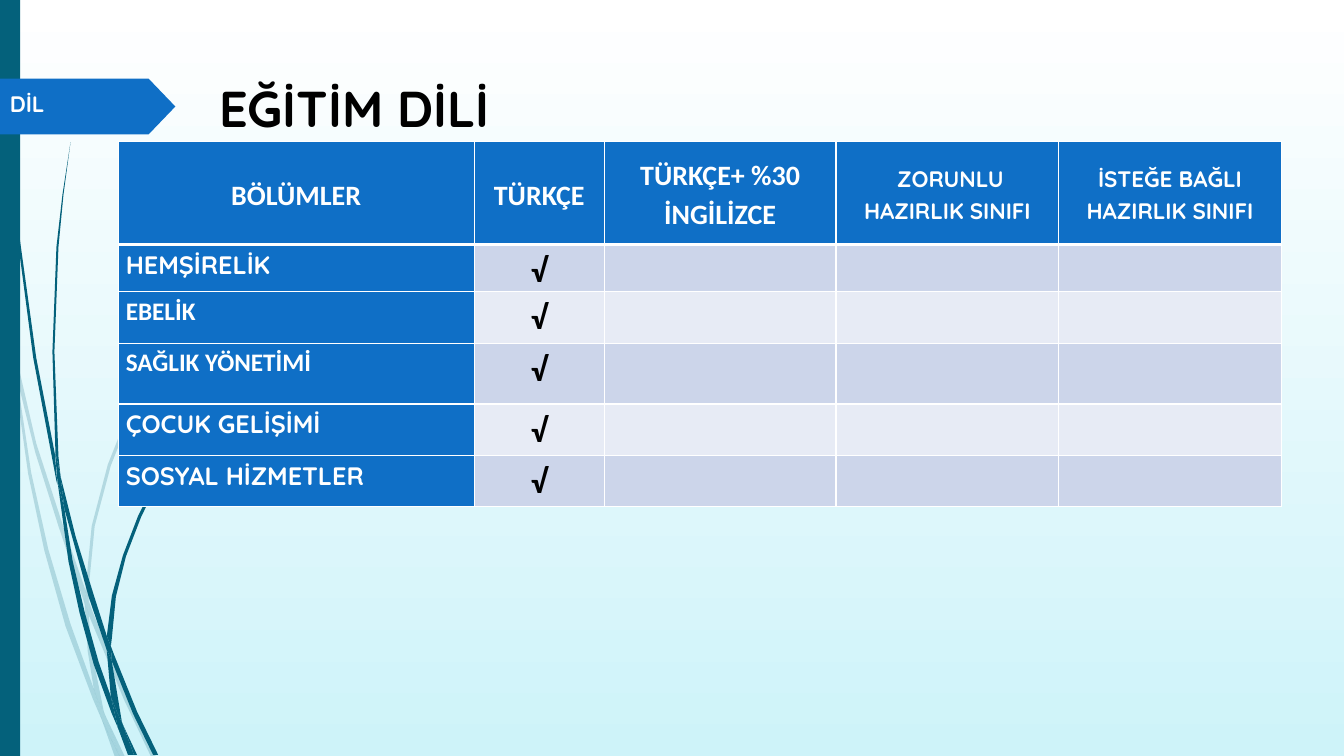
from dataclasses import dataclass

from lxml.etree import SubElement
from pptx import Presentation
from pptx.dml.color import RGBColor
from pptx.enum.shapes import MSO_SHAPE as Shape
from pptx.enum.text import MSO_ANCHOR as Anchor, PP_ALIGN as Align
from pptx.oxml.ns import qn
from pptx.util import Cm, Pt


@dataclass(frozen=True)
class Theme:
    teal: str = "04617B"
    blue: str = "0F6FC6"
    white: str = "FFFFFF"
    black: str = "000000"
    sky: str = "CEF3F9"
    bands: tuple = ("CCD5EA", "E7EBF5")
    display: str = "Quicksand"
    body: str = "Calibri"
    title: int = 36
    tick: int = 24
    head: int = 20
    label: int = 18
    small: int = 16


INCH = 2.54  # cm

# Outlines of the grass blades: (x, y) in inches
PALE_BLADES = [
    [(.11, 3.5), (.09, 3.22), (0, 2.82), (0, 2.99), (.1, 3.44)],
    [(.58, 5.22), (.84, 5.99), (.85, 5.86), (.62, 5.2), (.36, 4.4), (.14, 3.45),
     (.17, 3.76), (.35, 4.49)],
    [(.92, 6.07), (.88, 5.96), (.88, 6.1), (1.23, 6.94), (1.5, 7.51), (1.55, 7.51),
     (1.27, 6.92)],
    [(1.19, 7.51), (1.24, 7.51), (1.05, 7.11)],
    [(.93, 6.83), (.7, 6.19), (.48, 5.45), (.31, 4.69), (.17, 3.76), (.11, 3.5),
     (.28, 4.7), (.44, 5.46), (.65, 6.21), (.92, 6.93), (1.01, 7.14), (.99, 7.07)],
    [(.84, 5.99), (.87, 6.46), (.93, 6.83), (.96, 6.92), (1.05, 7.11), (1.03, 7.06),
     (.91, 6.46), (.88, 6.1), (.88, 6.08)],
    [(.88, 5.84), (.94, 5.22), (1.1, 4.62), (1.33, 4.04), (1.6, 3.49), (1.93, 2.95),
     (2.29, 2.45), (2.68, 1.98), (2.9, 1.75), (3.12, 1.54), (3.12, 1.53),
     (2.89, 1.75), (2.68, 1.97), (2.28, 2.44), (1.91, 2.94), (1.58, 3.48),
     (1.3, 4.03), (1.07, 4.61), (.91, 5.22), (.85, 5.84), (.85, 5.86), (.88, 5.96)],
    [(1.01, 7.14), (1.14, 7.51), (1.19, 7.51)],
    [(.88, 6.08), (.88, 6.1), (.88, 5.96), (.85, 5.86), (.84, 5.99)],
    [(.96, 6.92), (.93, 6.83), (.99, 7.07), (1.01, 7.14), (1.19, 7.51), (1.05, 7.11)],
]
DARK_BLADES = [
    [(.07, 1.1), (.17, 2.33), (.33, 3.55), (.56, 4.77), (.57, 4.81), (.55, 4.57),
     (.55, 4.53), (.36, 3.55), (.19, 2.32), (.08, 1.09), (.05, .48), (.04, 0),
     (.03, 0), (.04, .48)],
    [(.88, 5.92), (1.06, 6.45), (1.06, 6.33), (1.06, 6.31), (.93, 5.9), (.75, 5.32),
     (.6, 4.72), (.64, 5.05)],
    [(1.13, 6.49), (1.1, 6.41), (1.11, 6.56), (1.32, 7.08), (1.52, 7.49),
     (1.57, 7.49), (1.36, 7.06)],
    [(1.1, 6.91), (.98, 6.57), (.84, 6.07), (.72, 5.56), (.64, 5.05), (.57, 4.77),
     (.68, 5.57), (.79, 6.08), (.93, 6.59), (1.11, 7.08), (1.17, 7.22), (1.16, 7.17)],
    [(.6, 4.72), (.58, 4.53), (.54, 3.49), (.58, 2.45), (.63, 1.93), (.7, 1.41),
     (.62, 1.93), (.56, 2.45), (.52, 3.49), (.55, 4.49)],
    [(1.33, 7.49), (1.36, 7.49), (1.22, 7.19)],
    [(.57, 4.77), (.64, 5.05), (.6, 4.72), (.55, 4.49), (.55, 4.53)],
    [(1.11, 6.33), (1.15, 5.92), (1.25, 5.52), (1.4, 5.13), (1.58, 4.76),
     (1.8, 4.4), (2.05, 4.06), (2.31, 3.74), (2.45, 3.59), (2.61, 3.44), (2.6, 3.44),
     (2.45, 3.58), (2.31, 3.73), (2.04, 4.05), (1.78, 4.39), (1.56, 4.74),
     (1.37, 5.12), (1.22, 5.51), (1.11, 5.91), (1.06, 6.31), (1.1, 6.41)],
    [(1.17, 7.22), (1.27, 7.49), (1.31, 7.49)],
    [(1.06, 6.45), (1.1, 6.91), (1.16, 7.06), (1.22, 7.19), (1.21, 7.16),
     (1.11, 6.56), (1.09, 6.51)],
    [(1.06, 6.45), (1.09, 6.51), (1.11, 6.56), (1.1, 6.41), (1.06, 6.31), (1.06, 6.33)],
    [(1.16, 7.06), (1.1, 6.91), (1.16, 7.17), (1.17, 7.22), (1.3, 7.49),
     (1.33, 7.49), (1.22, 7.19)],
]


def rgb(color):
    return RGBColor.from_string(color)


class SlideBuilder:
    def __init__(self, prs, theme):
        self.theme = theme
        self.slide = prs.slides.add_slide(prs.slide_layouts[6])
        self.shapes = self.slide.shapes

    def background(self, top, bottom):
        fill = self.slide.background.fill
        fill.gradient()
        fill.gradient_angle = 270
        for stop, color, position in zip(fill.gradient_stops, (top, bottom), (0, 1)):
            stop.color.rgb = rgb(color)
            stop.position = position

    def paint(self, sp, color, opacity=100):
        sp.shadow.inherit = False
        sp.fill.solid()
        sp.fill.fore_color.rgb = rgb(color)
        sp.line.fill.background()
        if opacity < 100:
            tint = sp.fill._xPr.find(qn("a:solidFill"))[0]
            SubElement(tint, qn("a:alpha"), val=str(opacity * 1000))

    def shape(self, kind, box, color):
        sp = self.shapes.add_shape(kind, *map(Cm, box))
        self.paint(sp, color)
        return sp

    def blade(self, outline, color, opacity=100):
        points = [(Cm(x * INCH), Cm(y * INCH)) for x, y in outline]
        builder = self.shapes.build_freeform(*points[0])
        builder.add_line_segments(points[1:], close=True)
        self.paint(builder.convert_to_shape(), color, opacity)

    def run(self, p, text, size, font, color):
        r = p.add_run()
        r.text = text
        r.font.size, r.font.name, r.font.bold = Pt(size), font, True
        r.font.color.rgb = rgb(color)

    def text(self, box, text, size, color):
        tf = self.shapes.add_textbox(*map(Cm, box)).text_frame
        tf.word_wrap = True
        self.run(tf.paragraphs[0], text, size, self.theme.display, color)

    def table(self, left, top, widths, heights):
        frame = self.shapes.add_table(len(heights), len(widths), Cm(left), Cm(top),
                                      Cm(sum(widths)), Cm(sum(heights)))
        for column, width in zip(frame.table.columns, widths):
            column.width = Cm(width)
        for row, height in zip(frame.table.rows, heights):
            row.height = Cm(height)
        return frame.table

    def cell(self, cell, color, top=1, bottom=1):
        tcPr = cell._tc.get_or_add_tcPr()
        for side, width in zip("LRTB", (1, 1, top, bottom)):
            ln = SubElement(tcPr, qn(f"a:ln{side}"), w=str(Pt(width)))
            SubElement(SubElement(ln, qn("a:solidFill")), qn("a:srgbClr"),
                       val=self.theme.white)
        cell.fill.solid()
        cell.fill.fore_color.rgb = rgb(color)

    def cell_text(self, cell, text, size, font, color, align, anchor=Anchor.TOP):
        cell.margin_left = cell.margin_right = Cm(0.19)
        cell.margin_top = cell.margin_bottom = 0
        cell.vertical_anchor = anchor
        p = cell.text_frame.paragraphs[0]
        p.alignment, p.line_spacing = align, 1.15
        self.run(p, text, size, font, color)


def main():
    prs = Presentation()
    prs.slide_width, prs.slide_height = Cm(33.87), Cm(19.05)
    th = Theme()
    s = SlideBuilder(prs, th)

    # Backdrop and side band
    s.background(th.white, th.sky)
    for outline in PALE_BLADES:
        s.blade(outline, th.teal, opacity=20)
    for outline in DARK_BLADES:
        s.blade(outline, th.teal)
    s.shape(Shape.RECTANGLE, (0, 0, 0.51, 19.05), th.teal)

    # Section tag
    tag = s.shape(Shape.PENTAGON, (0, 1.98, 4.42, 1.41), th.blue)
    tag.adjustments[0] = 0.48
    s.text((0, 2.15, 4.29, 0.94), "DİL", th.small, th.white)

    # Table of departments and teaching languages
    headers = [
        ("BÖLÜMLER", th.head, th.body),
        ("TÜRKÇE", th.head, th.body),
        ("TÜRKÇE+ %30 İNGİLİZCE", th.head, th.body),
        (" ZORUNLU HAZIRLIK SINIFI", th.small, th.display),
        ("İSTEĞE BAĞLI HAZIRLIK SINIFI", th.small, th.display),
    ]
    departments = [
        ("HEMŞİRELİK", th.display),
        ("EBELİK", th.body),
        ("SAĞLIK YÖNETİMİ", th.body),
        ("ÇOCUK GELİŞİMİ", th.display),
        ("SOSYAL HİZMETLER", th.display),
    ]
    table = s.table(2.98, 3.56, (8.97, 3.28, 5.84, 5.61, 5.61),
                    (2.6, 1.19, 1.3, 1.53, 1.3, 1.29))
    for col, (text, size, font) in enumerate(headers):
        cell = table.cell(0, col)
        s.cell(cell, th.blue, bottom=3)
        s.cell_text(cell, text, size, font, th.white, Align.CENTER, Anchor.MIDDLE)
    for row, (name, font) in enumerate(departments, 1):
        band = th.bands[(row - 1) % 2]
        for col in range(len(headers)):
            s.cell(table.cell(row, col), band if col else th.blue,
                   top=3 if row == 1 else 1)
        s.cell_text(table.cell(row, 0), name, th.label, font, th.white, Align.JUSTIFY)
        s.cell_text(table.cell(row, 1), "√", th.tick, th.body, th.black, Align.CENTER)

    # Title
    s.text((5.27, 1.83, 25.73, 2.54), "EĞİTİM DİLİ", th.title, th.black)

    prs.save("out.pptx")


if __name__ == "__main__":
    main()
